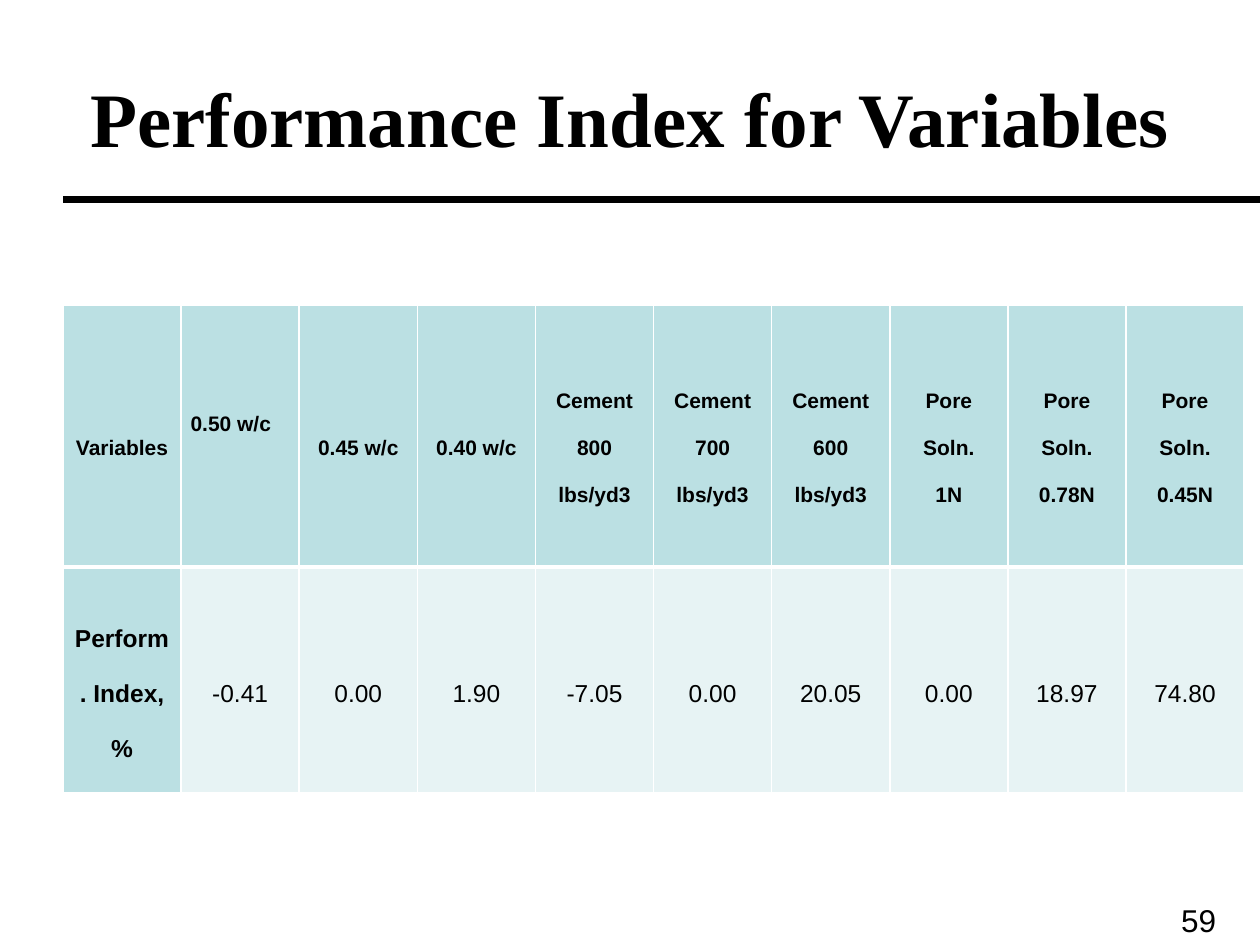
from lxml import etree
from pptx import Presentation
from pptx import util as u
from pptx.dml.color import RGBColor
from pptx.enum import shapes, text
from pptx.oxml import ns

BLACK, WHITE, TEAL, PALE = "000000", "FFFFFF", "BBE0E3", "E7F3F4"
CENTER = text.PP_ALIGN.CENTER
VARIABLES = [
    "Variables", "0.50 w/c", "0.45 w/c", "0.40 w/c",
    "Cement 800 lbs/yd3", "Cement 700 lbs/yd3", "Cement 600 lbs/yd3",
    "Pore Soln.\n1N", "Pore Soln. 0.78N", "Pore Soln. 0.45N",
]
INDEXES = ["Perform. Index, %", "-0.41", "0.00", "1.90", "-7.05",
           "0.00", "20.05", "0.00", "18.97", "74.80"]


def color(hex_code):
    """Turn a hex string into a colour."""
    return RGBColor.from_string(hex_code)


def write(frame, words, size, bold=False, font="Arial", align=CENTER, spacing=1):
    """Fill a text frame and format all its paragraphs alike."""
    frame.text = words
    for paragraph in frame.paragraphs:
        paragraph.alignment = align
        paragraph.line_spacing = spacing
        for run in paragraph.runs:
            run.font.size = u.Pt(size)
            run.font.bold = bold
            run.font.name = font
            run.font.color.rgb = color(BLACK)


def add_label(slide, box, words, size, **style):
    """Add a wrapped, vertically centred text box."""
    frame = slide.shapes.add_textbox(*map(u.Pt, box)).text_frame
    frame.word_wrap = True
    frame.vertical_anchor = text.MSO_ANCHOR.MIDDLE
    write(frame, words, size, **style)


def add_rule(slide, left, right, y, width):
    """Add a black horizontal line without a shadow."""
    rule = slide.shapes.add_connector(
        shapes.MSO_CONNECTOR.STRAIGHT, u.Pt(left), u.Pt(y), u.Pt(right), u.Pt(y))
    rule.line.color.rgb = color(BLACK)
    rule.line.width = u.Pt(width)
    etree.SubElement(rule._element.spPr, ns.qn("a:effectLst"))


def set_borders(cell, **widths):
    """Draw white cell borders, given a width for each side."""
    properties = cell._tc.get_or_add_tcPr()
    for position, (side, width) in enumerate(widths.items()):
        border = etree.Element(ns.qn(f"a:ln{side}"), w=str(u.Pt(width)))
        fill = etree.SubElement(border, ns.qn("a:solidFill"))
        etree.SubElement(fill, ns.qn("a:srgbClr"), val=WHITE)
        properties.insert(position, border)


def style_cell(cell, words, fill, size, bold):
    """Write one table cell and set its fill and margins."""
    cell.fill.solid()
    cell.fill.fore_color.rgb = color(fill)
    cell.margin_left = cell.margin_right = u.Pt(5.4)
    cell.margin_top = cell.margin_bottom = 0
    cell.vertical_anchor = text.MSO_ANCHOR.MIDDLE
    write(cell.text_frame, words, size, bold=bold, spacing=2)


def add_index_table(slide):
    """Add the table of variables and their performance indexes."""
    column_width, row_heights = 67.5, (149.8, 128.9)
    table = slide.shapes.add_table(
        2, len(VARIABLES), u.Pt(36), u.Pt(174.3),
        u.Pt(column_width * len(VARIABLES)), u.Pt(sum(row_heights))).table
    for row, height in zip(table.rows, row_heights):
        row.height = u.Pt(height)
    for index, (variable, value) in enumerate(zip(VARIABLES, INDEXES)):
        table.columns[index].width = u.Pt(column_width)
        header, body = table.cell(0, index), table.cell(1, index)
        is_label = index == 0
        style_cell(header, variable, TEAL, 12, True)
        style_cell(body, value, TEAL if is_label else PALE, 14, is_label)
        set_borders(header, L=1, R=1, T=1, B=3)
        set_borders(body, L=1, R=1, T=3, B=1)
    first_ratio = table.cell(0, 1)
    first_ratio.margin_bottom = u.Pt(27)
    first_ratio.text_frame.paragraphs[0].alignment = text.PP_ALIGN.LEFT


def main():
    """Build the slide and save it."""
    deck = Presentation()
    deck.slide_width, deck.slide_height = u.Pt(720), u.Pt(540)
    slide = deck.slides.add_slide(deck.slide_layouts[6])
    add_rule(slide, 36, 720, 114, 4.5)
    add_label(slide, (36, 21.6, 648, 90), "Performance Index for Variables", 44,
              bold=True, font="Times New Roman")
    add_index_table(slide)
    add_label(slide, (558, 511.2, 144, 28.8), "59", 18, align=text.PP_ALIGN.RIGHT)
    deck.save("out.pptx")


if __name__ == "__main__":
    main()
